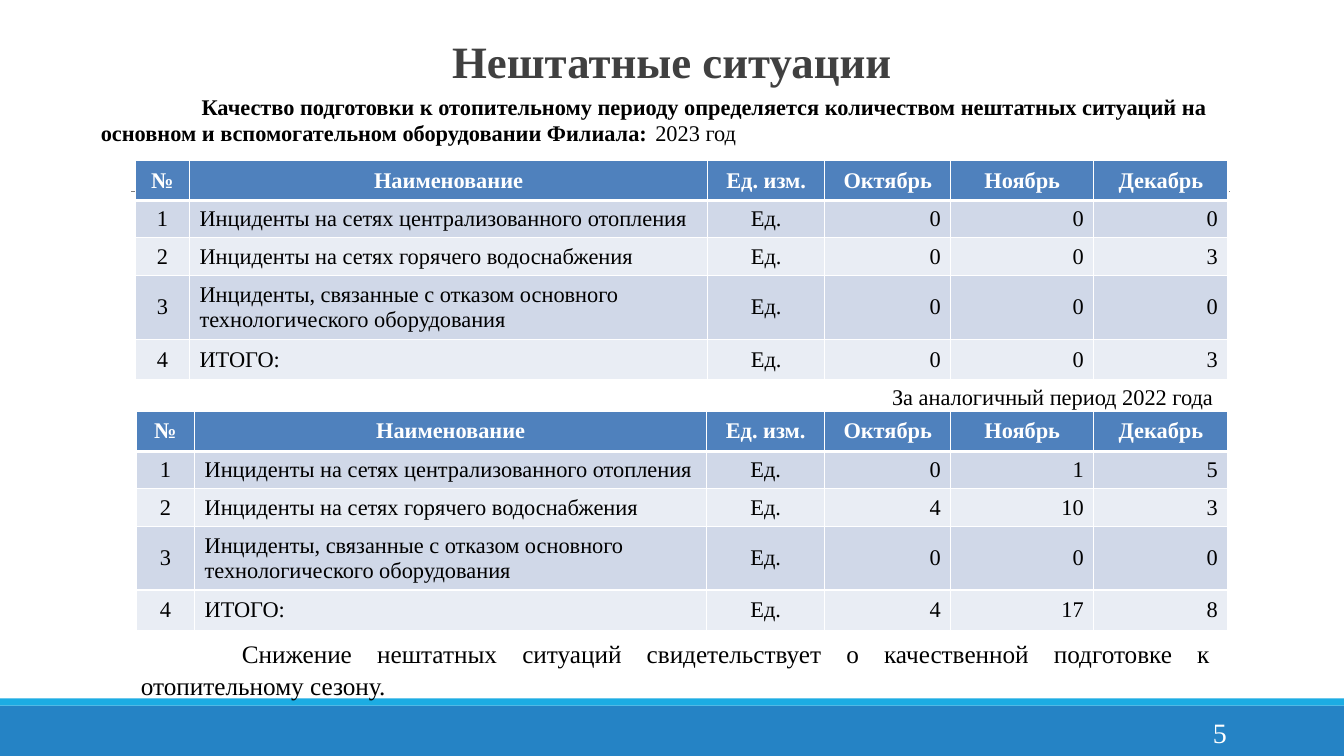
from lxml import etree
from pptx import Presentation
from pptx.dml.color import RGBColor
from pptx.enum.shapes import MSO_CONNECTOR, MSO_SHAPE
from pptx.enum.text import MSO_ANCHOR, PP_ALIGN
from pptx.oxml.ns import qn
from pptx.util import Inches, Pt

LEFT, CENTER, RIGHT, JUSTIFY = PP_ALIGN.LEFT, PP_ALIGN.CENTER, PP_ALIGN.RIGHT, PP_ALIGN.JUSTIFY
MIDDLE = MSO_ANCHOR.MIDDLE
RECTANGLE = MSO_SHAPE.RECTANGLE
STRAIGHT = MSO_CONNECTOR.STRAIGHT

FONT = "Times New Roman"
BLACK = RGBColor(0x00, 0x00, 0x00)
WHITE = RGBColor(0xFF, 0xFF, 0xFF)
TITLE_GRAY = RGBColor(0x40, 0x40, 0x40)
RULE_GRAY = RGBColor(0x7E, 0x7E, 0x7E)
FOOTER_BLUE = RGBColor(0x25, 0x83, 0xC5)
STRIPE_BLUE = RGBColor(0x1C, 0xAC, 0xE3)
HEADER_BLUE = RGBColor(0x4F, 0x81, 0xBD)
BANDS = (RGBColor(0xD0, 0xD8, 0xE8), RGBColor(0xE9, 0xED, 0xF4))

# Content
TITLE = "Нештатные ситуации"
INTRO = ("Качество подготовки к отопительному периоду определяется количеством "
         "нештатных ситуаций на основном и вспомогательном оборудовании Филиала:")
CURRENT_YEAR = "2023 год"
PREVIOUS_YEAR = "За аналогичный период 2022 года"
CONCLUSION = ("Снижение нештатных ситуаций свидетельствует о качественной подготовке "
              "к отопительному сезону.")
PAGE_NUMBER = "5"
HEADERS = ("№", "Наименование", "Ед. изм.", "Октябрь", "Ноябрь", "Декабрь")
INCIDENTS = (
    "Инциденты на сетях централизованного отопления",
    "Инциденты на сетях горячего водоснабжения",
    "Инциденты, связанные с отказом основного технологического оборудования",
    "ИТОГО:",
)
UNIT = "Ед."
ALIGNMENTS = (CENTER, LEFT, CENTER, RIGHT, RIGHT, RIGHT)
TABLES = (
    {"left": 1.34, "top": 1.59,
     "columns": (0.54, 5.14, 1.16, 1.25, 1.42, 1.33),
     "rows": (0.4, 0.37, 0.37, 0.64, 0.4),
     "counts": ((0, 0, 0), (0, 0, 3), (0, 0, 0), (0, 0, 3))},
    {"left": 1.35, "top": 4.08,
     "columns": (0.58, 5.08, 1.17, 1.25, 1.42, 1.33),
     "rows": (0.4, 0.37, 0.37, 0.63, 0.4),
     "counts": ((0, 1, 5), (4, 10, 3), (0, 0, 0), (4, 17, 8))},
)

presentation = Presentation()
presentation.slide_width = Inches(13.33)
presentation.slide_height = Inches(7.5)
slide = presentation.slides.add_slide(presentation.slide_layouts[6])


def format_run(run, size, color=BLACK, bold=False):
    run.font.name = FONT
    run.font.size = Pt(size)
    run.font.bold = bold
    run.font.color.rgb = color


def add_text(box, text, size, color=BLACK, bold=False, align=LEFT, margins=None):
    shape = slide.shapes.add_textbox(*map(Inches, box))
    frame = shape.text_frame
    frame.word_wrap = True
    if margins is not None:
        frame.margin_left = frame.margin_right = frame.margin_bottom = 0
        frame.margin_top = Inches(margins)
    paragraph = frame.paragraphs[0]
    paragraph.text = text
    paragraph.alignment = align
    format_run(paragraph.runs[0], size, color, bold)
    return paragraph


def indent_first_line(paragraph):
    properties = paragraph._p.get_or_add_pPr()
    properties.set("indent", str(Inches(1)))
    return properties


def add_band(top, height, color):
    band = slide.shapes.add_shape(RECTANGLE, 0, Inches(top), Inches(13.33), Inches(height))
    band.shadow.inherit = False
    band.fill.solid()
    band.fill.fore_color.rgb = color
    band.line.fill.background()


def add_border(cell, side, width):
    properties = cell._tc.get_or_add_tcPr()
    border = etree.SubElement(properties, qn(f"a:ln{side}"), w=str(Pt(width)))
    fill = etree.SubElement(border, qn("a:solidFill"))
    etree.SubElement(fill, qn("a:srgbClr"), val=str(WHITE))


def format_cell(cell, text, row, align):
    is_header = row == 0
    for side in "LRTB":
        thick = (is_header and side == "B") or (row == 1 and side == "T")
        add_border(cell, side, 3 if thick else 1)
    cell.fill.solid()
    cell.fill.fore_color.rgb = HEADER_BLUE if is_header else BANDS[(row - 1) % 2]
    cell.vertical_anchor = MIDDLE
    paragraph = cell.text_frame.paragraphs[0]
    paragraph.text = text
    paragraph.alignment = CENTER if is_header else align
    format_run(paragraph.runs[0], 16, WHITE if is_header else BLACK, is_header)


def add_incident_table(left, top, columns, rows, counts):
    frame = slide.shapes.add_table(len(rows), len(columns), Inches(left), Inches(top),
                                   Inches(sum(columns)), Inches(sum(rows)))
    table = frame.table
    table.horz_banding = False
    for column, width in zip(table.columns, columns):
        column.width = Inches(width)
    for row, height in zip(table.rows, rows):
        row.height = Inches(height)
    content = [HEADERS]
    for number, (name, months) in enumerate(zip(INCIDENTS, counts), 1):
        content.append((str(number), name, UNIT, *map(str, months)))
    for row, values in enumerate(content):
        for column, (value, align) in enumerate(zip(values, ALIGNMENTS)):
            format_cell(table.cell(row, column), value, row, align)


# Footer bands and rule behind the first table
add_band(7, 0.5, FOOTER_BLUE)
add_band(6.93, 0.07, STRIPE_BLUE)
rule = slide.shapes.add_connector(STRAIGHT, Inches(1.3), Inches(1.9), Inches(12.2), Inches(1.9))
rule.line.color.rgb = RULE_GRAY
rule.line.width = Pt(0.48)
etree.SubElement(rule._element.spPr, qn("a:effectLst"))

# Title and page number
add_text((1, 0.33, 11.33, 0.54), TITLE, 32, TITLE_GRAY, True, CENTER, margins=0)
page = add_text((12, 7.11, 0.2, 0.34), PAGE_NUMBER, 20, WHITE, margins=0)
page.line_spacing = Pt(22.9)
page._p.get_or_add_pPr().set("marL", str(Inches(0.03)))

# Introduction, with the year placed at a tab stop
intro = add_text((0.99, 0.91, 11.53, 0.55), INTRO, 16, bold=True, margins=0.01)
intro.space_before = Pt(1.1)
intro_properties = indent_first_line(intro)
intro_properties.set("marL", str(Inches(0.01)))
tab_list = etree.SubElement(intro_properties, qn("a:tabLst"))
etree.SubElement(tab_list, qn("a:tab"), pos=str(Inches(9.07)), algn="l")
year = intro.add_run()
year.text = "\t" + CURRENT_YEAR
format_run(year, 16)

# Tables
for incident_table in TABLES:
    add_incident_table(**incident_table)

# Caption of the second table and conclusion
add_text((1.04, 3.75, 11.09, 0.37), PREVIOUS_YEAR, 16, align=RIGHT)
conclusion = add_text((1.3, 6.26, 10.8, 0.71), CONCLUSION, 18, align=JUSTIFY)
conclusion.line_spacing = 1.07
indent_first_line(conclusion)

presentation.save("out.pptx")
